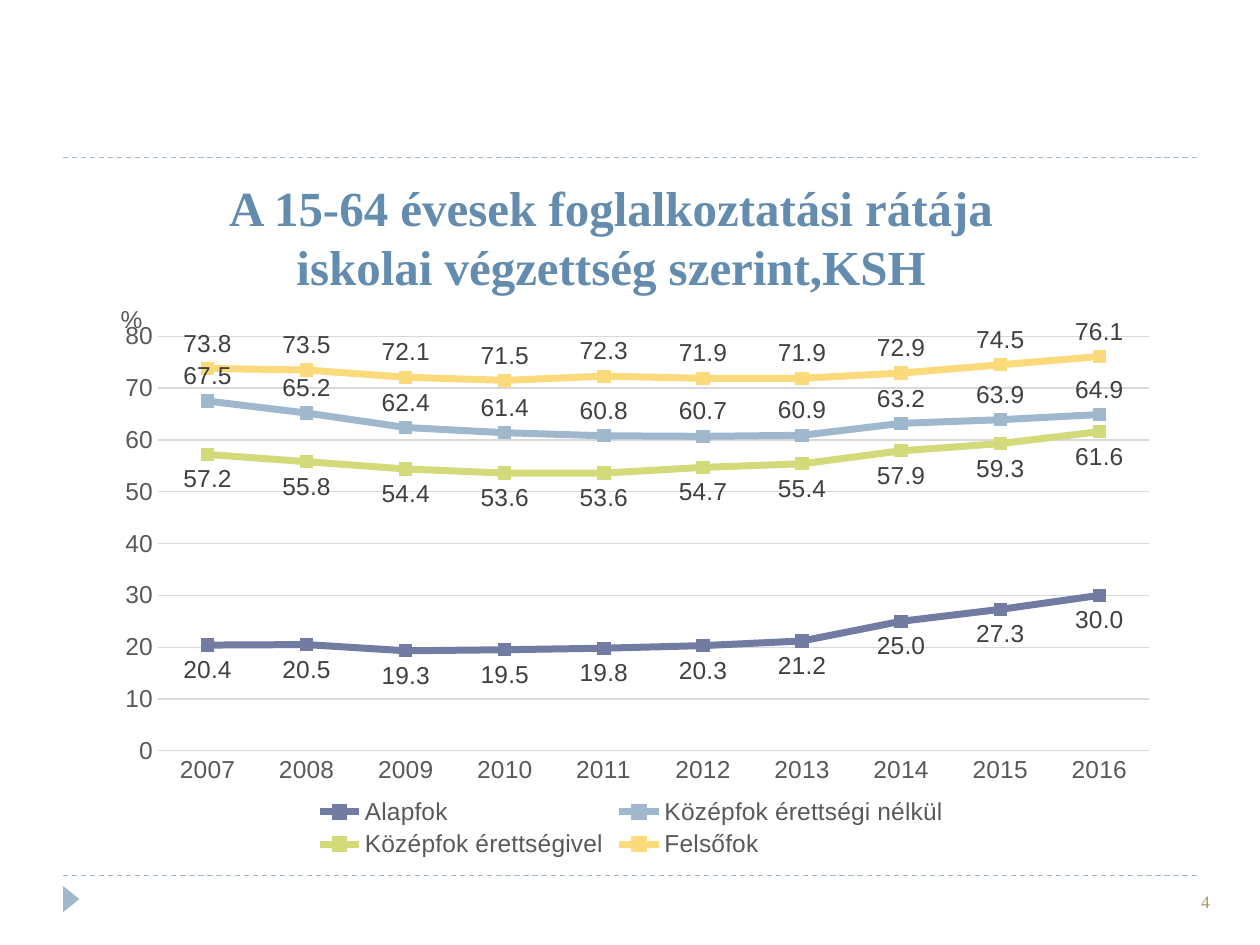
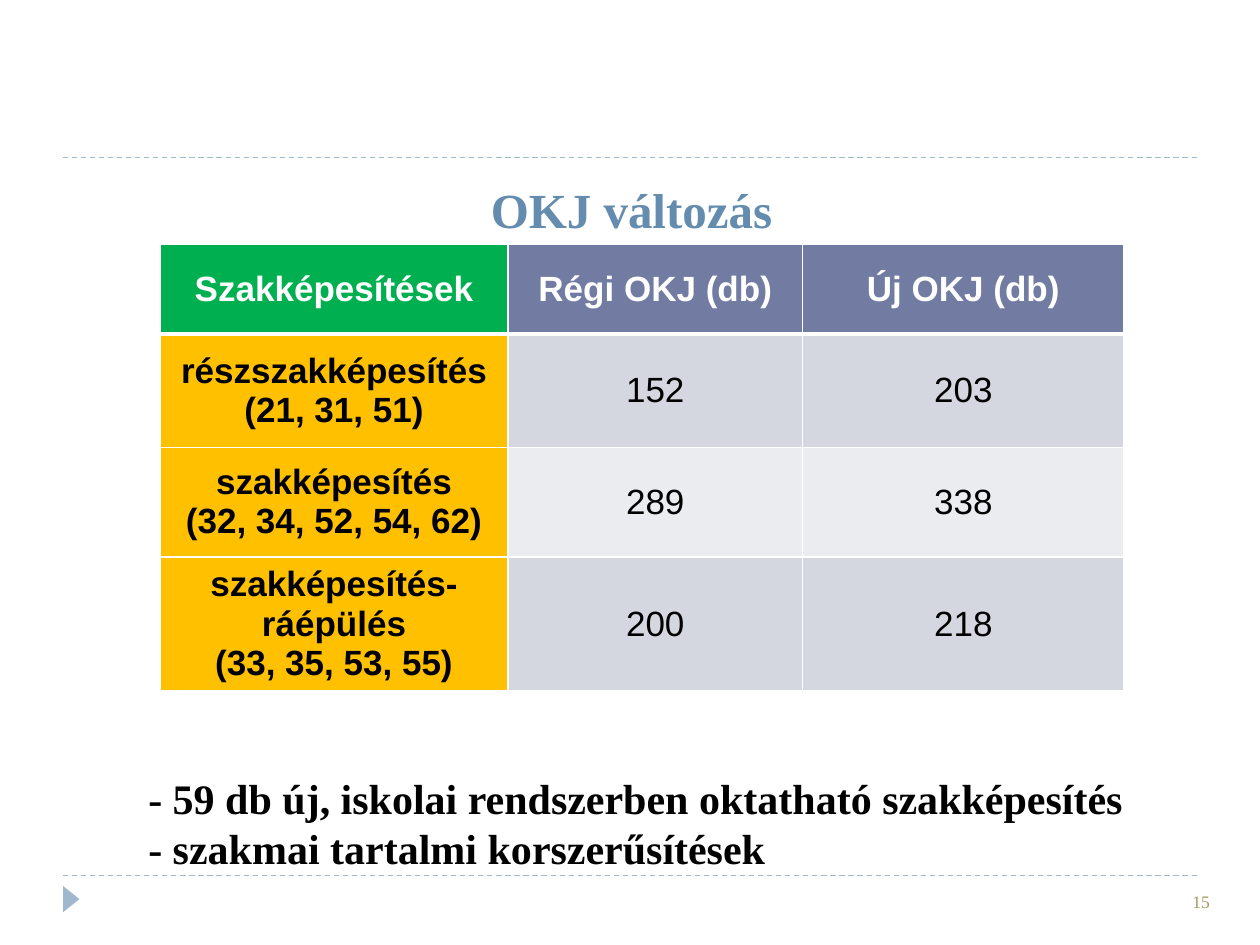
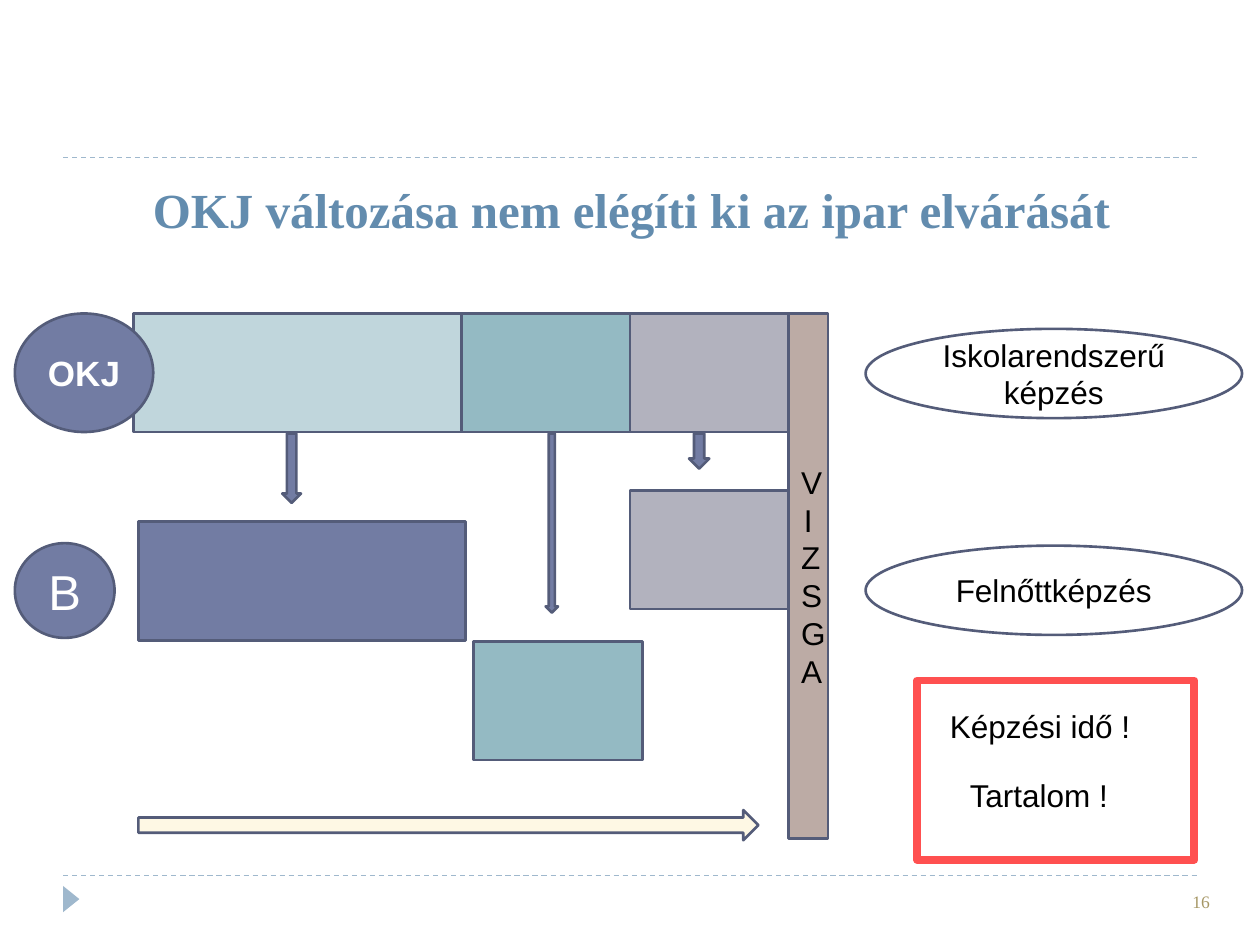
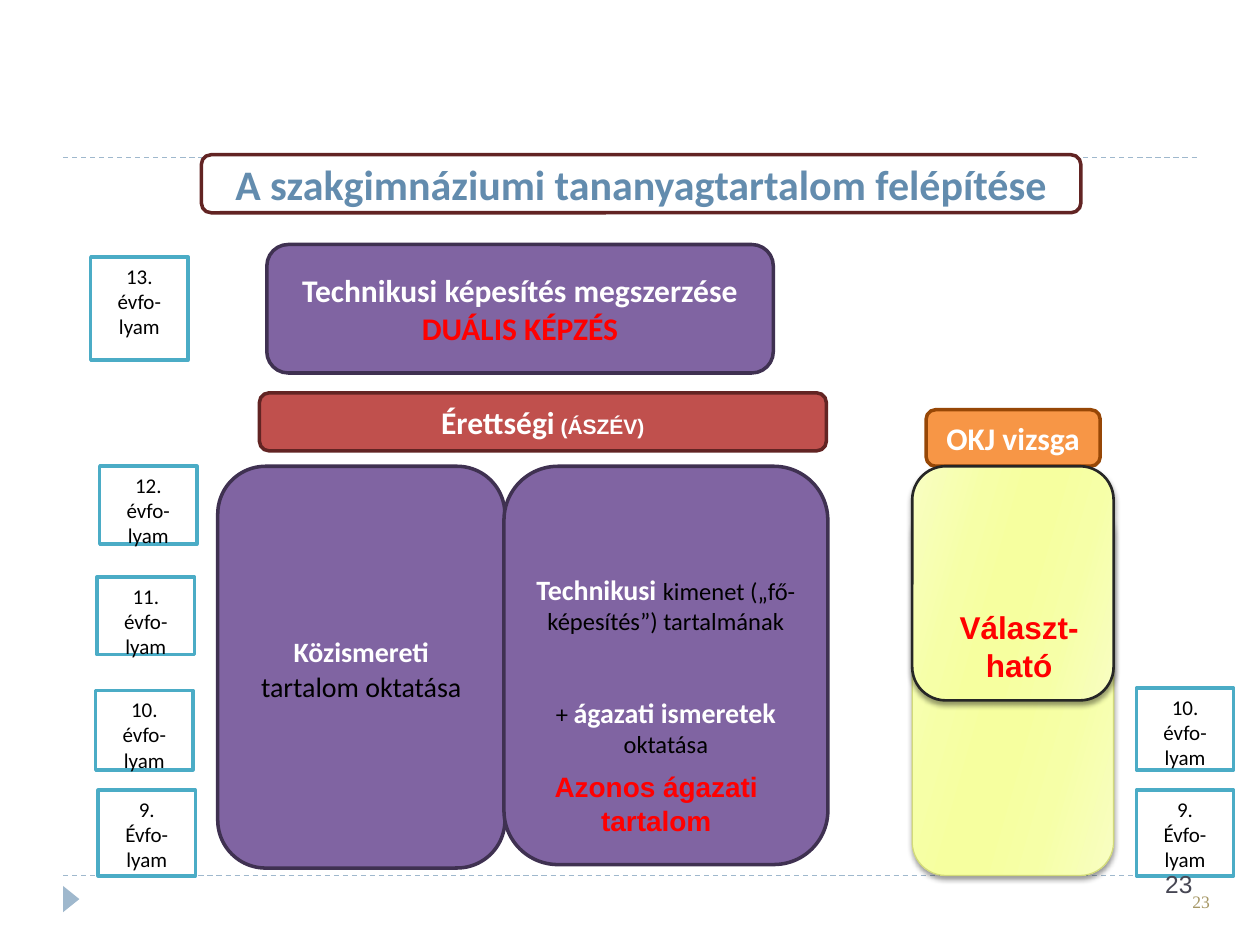
"""Build four slides on vocational training and the OKJ register."""
from collections import namedtuple

from lxml import etree
from pptx import Presentation
from pptx.chart.data import CategoryChartData
from pptx.dml.color import RGBColor
from pptx.enum.chart import (XL_CHART_TYPE, XL_LABEL_POSITION, XL_LEGEND_POSITION,
                             XL_MARKER_STYLE, XL_TICK_MARK)
from pptx.enum.dml import MSO_LINE
from pptx.enum.shapes import MSO_CONNECTOR, MSO_SHAPE
from pptx.enum.text import MSO_ANCHOR, PP_ALIGN
from pptx.oxml.ns import qn
from pptx.util import Cm, Pt

LEFT, CENTER, RIGHT = PP_ALIGN.LEFT, PP_ALIGN.CENTER, PP_ALIGN.RIGHT
TOP, MIDDLE, BOTTOM = MSO_ANCHOR.TOP, MSO_ANCHOR.MIDDLE, MSO_ANCHOR.BOTTOM
RECT, ROUND, OVAL = MSO_SHAPE.RECTANGLE, MSO_SHAPE.ROUNDED_RECTANGLE, MSO_SHAPE.OVAL
DOWN, ARROW, TRIANGLE = MSO_SHAPE.DOWN_ARROW, MSO_SHAPE.RIGHT_ARROW, MSO_SHAPE.ISOSCELES_TRIANGLE
ABOVE, BELOW = XL_LABEL_POSITION.ABOVE, XL_LABEL_POSITION.BELOW
NO_TICK = XL_TICK_MARK.NONE

COLORS = {
    "white": "FFFFFF", "black": "000000", "red": "FF0000", "title": "638CAE",
    "rule": "9FB8CD", "number": "A69765", "indigo": "727CA3", "edge": "545C79",
    "lime": "D2DA7A", "gold": "FADA7A", "axis": "595959", "label": "404040",
    "grid": "D9D9D9", "green": "00B050", "amber": "FFC000", "band": "D5D7E0",
    "pale": "EBECF0", "ice": "C0D6DC", "teal": "94BAC3", "stone": "B2B2BE",
    "clay": "BCABA5", "cream": "FEF8E4", "coral": "FF5050", "purple": "8064A2",
    "plum": "3F3151", "brick": "C0504D", "maroon": "622423", "orange": "F79646",
    "rust": "974706", "aqua": "4BACC6", "slate": "464653", "ink": "262626",
    "glow0": "F8FEC2", "glow1": "F6FFA7", "glow2": "F6FF9F",
}
SERIF, SANS, HUMAN = "Times New Roman", "Arial", "Calibri"
Style = namedtuple("Style", "font size color bold", defaults=(False,))
TITLE = Style(SERIF, 28, "title", True)
BODY = Style(SANS, 18, "black")
STRONG = Style(HUMAN, 18, "white", True)
STRONG_SMALL = Style(HUMAN, 16, "white", True)
PLAIN = Style(HUMAN, 14, "black")
GLOW = [(0, "glow0"), (30, "glow1"), (45, "glow2"), (55, "glow2"), (73, "glow1"), (100, "glow0")]


def rgb(name):
    """Return the named colour."""
    return RGBColor.from_string(COLORS[name])


def set_font(font, style):
    """Apply a style to a font."""
    font.name, font.size, font.bold = style.font, Pt(style.size), style.bold
    font.color.rgb = rgb(style.color)


def write(tf, paras, style, align=CENTER, anchor=MIDDLE, gap=0):
    """Fill a text frame; a paragraph is a string or a list of (text, style) runs."""
    tf.word_wrap = True
    tf.vertical_anchor = anchor
    for i, content in enumerate(paras):
        p = tf.paragraphs[0] if i == 0 else tf.add_paragraph()
        p.alignment = align
        if i and gap:
            p.space_before = Pt(gap)
        if isinstance(content, str):
            p.text = content
            set_font(p.font, style)
        else:
            for text, run_style in content:
                r = p.add_run()
                r.text = text
                set_font(r.font, run_style)


def add_text(s, box, paras, style, align=LEFT, anchor=TOP):
    """Add a text box."""
    write(s.shapes.add_textbox(*map(Cm, box)).text_frame, paras, style, align, anchor)


def add_block(s, kind, box, fill, line=None, width=1.5, paras=(), style=BODY, anchor=MIDDLE, gap=0):
    """Add a flat preset shape with optional text."""
    sp = s.shapes.add_shape(kind, *map(Cm, box))
    sp.shadow.inherit = False
    sp.fill.solid()
    sp.fill.fore_color.rgb = rgb(fill)
    if line:
        sp.line.color.rgb = rgb(line)
        sp.line.width = Pt(width)
    else:
        sp.line.fill.background()
    if paras:
        write(sp.text_frame, paras, style, CENTER, anchor, gap)
    return sp


def add_color(parent, name, alpha=None):
    """Append a colour element, optionally transparent."""
    clr = etree.SubElement(parent, qn("a:srgbClr"), val=COLORS[name])
    if alpha:
        etree.SubElement(clr, qn("a:alpha"), val=str(alpha * 1000))


def add_glow(s, box, line, width):
    """Add a rounded block with a yellow gradient and a soft shadow."""
    sp = add_block(s, ROUND, box, "glow1", line, width)
    sp.fill.gradient()
    sp.fill.gradient_angle = 344
    stops = sp.element.spPr.find(".//" + qn("a:gsLst"))
    for stop in list(stops):
        stops.remove(stop)
    for pos, name in GLOW:
        add_color(etree.SubElement(stops, qn("a:gs"), pos=str(pos * 1000)), name)
    shadow = etree.SubElement(sp.element.spPr.find(qn("a:effectLst")), qn("a:outerShdw"),
                              blurRad=str(Pt(3)), dist=str(Pt(2)), dir="5400000", rotWithShape="0")
    add_color(shadow, "black", 40)


def add_frame(prs, number):
    """Add a slide with its rules, corner mark and page number."""
    s = prs.slides.add_slide(prs.slide_layouts[6])
    for y in (17.65, 3.18):
        rule = s.shapes.add_connector(MSO_CONNECTOR.STRAIGHT, Cm(1.27), Cm(y), Cm(24.13), Cm(y))
        rule.line.color.rgb = rgb("rule")
        rule.line.width = Pt(0.75)
        rule.line.dash_style = MSO_LINE.DASH
        etree.SubElement(rule.element.spPr, qn("a:effectLst"))
    add_block(s, TRIANGLE, (1.17, 17.96, 0.53, 0.33), "rule").rotation = 90
    add_text(s, (18.72, 17.83, 5.92, 1.02), [str(number)], Style(SERIF, 10, "number"), RIGHT)
    return s


def add_title(s, text, box=(1.3, 3.53, 22.86, 1.4)):
    """Add the slide title."""
    add_text(s, box, [text], TITLE, CENTER, BOTTOM)


def set_layout(parent, index, **values):
    """Give a chart part a manual layout."""
    for old in parent.findall(qn("c:layout")):
        parent.remove(old)
    layout = etree.Element(qn("c:layout"))
    parent.insert(index, layout)
    manual = etree.SubElement(layout, qn("c:manualLayout"))
    for tag, value in values.items():
        etree.SubElement(manual, qn("c:" + tag), val=str(value))


def style_axes(chart):
    """Format both axes and the unit sign above the value axis."""
    style = Style(SANS, 14, "axis")
    cat, val = chart.category_axis, chart.value_axis
    for axis in (cat, val):
        axis.major_tick_mark = axis.minor_tick_mark = NO_TICK
        set_font(axis.tick_labels.font, style)
    cat.format.line.color.rgb = rgb("grid")
    cat.format.line.width = Pt(0.75)
    val.minimum_scale, val.maximum_scale, val.major_unit = 0, 80, 10
    val.tick_labels.number_format = "0"
    val.tick_labels.number_format_is_linked = False
    val.format.line.fill.background()
    val.major_gridlines.format.line.color.rgb = rgb("grid")
    val.major_gridlines.format.line.width = Pt(0.75)
    tf = val.axis_title.text_frame
    tf.text = "%"
    set_font(tf.paragraphs[0].font, style)
    tf._txBody.bodyPr.set("rot", "0")
    set_layout(val.axis_title._element, 1, xMode="edge", yMode="edge", x=0.02, y=0.01)


def style_series(series, color, position):
    """Format one line with its markers and labels."""
    series.smooth = False
    series.format.line.color.rgb = rgb(color)
    series.format.line.width = Pt(4)
    series.marker.style = XL_MARKER_STYLE.SQUARE
    series.marker.size = 7
    series.marker.format.fill.solid()
    series.marker.format.fill.fore_color.rgb = rgb(color)
    series.marker.format.line.color.rgb = rgb(color)
    labels = series.data_labels
    labels.show_value = True
    labels.position = position
    labels.number_format = "0.0"
    labels.number_format_is_linked = False
    set_font(labels.font, Style(SANS, 14, "label"))


def add_rate_chart(s, box):
    """Add the line chart of employment rates."""
    rates = [
        ("Alapfok", "indigo", BELOW,
         (20.4, 20.5, 19.3, 19.5, 19.8, 20.3, 21.2, 25.0, 27.3, 30.0)),
        ("Középfok érettségi nélkül", "rule", ABOVE,
         (67.5, 65.2, 62.4, 61.4, 60.8, 60.7, 60.9, 63.2, 63.9, 64.9)),
        ("Középfok érettségivel", "lime", BELOW,
         (57.2, 55.8, 54.4, 53.6, 53.6, 54.7, 55.4, 57.9, 59.3, 61.6)),
        ("Felsőfok", "gold", ABOVE,
         (73.8, 73.5, 72.1, 71.5, 72.3, 71.9, 71.9, 72.9, 74.5, 76.1)),
    ]
    data = CategoryChartData(number_format="0.0")
    data.categories = [str(year) for year in range(2007, 2017)]
    for name, _, _, values in rates:
        data.add_series(name, values)
    chart = s.shapes.add_chart(XL_CHART_TYPE.LINE_MARKERS, *map(Cm, box), data).chart
    chart.has_title = False
    set_font(chart.font, Style(SANS, 14, "black"))
    chart.has_legend = True
    chart.legend.position = XL_LEGEND_POSITION.BOTTOM
    chart.legend.include_in_layout = False
    set_font(chart.legend.font, Style(SANS, 14, "axis"))
    style_axes(chart)
    chart.plots[0].vary_by_categories = False
    for series, (_, color, position, _) in zip(chart.plots[0].series, rates):
        style_series(series, color, position)
    set_layout(chart._chartSpace.chart.plotArea, 0, layoutTarget="inner", xMode="edge",
               yMode="edge", x=0.059, y=0.075, w=0.923, h=0.728)


def style_cell(cell, paras, fill, style, header):
    """Fill one table cell and draw its white borders."""
    cell.margin_left = cell.margin_right = Cm(0.18)
    cell.margin_top = cell.margin_bottom = 0
    write(cell.text_frame, paras, style)
    cell.vertical_anchor = MIDDLE
    if header:
        cell.text_frame.paragraphs[0].space_after = Pt(6)
    tcPr = cell._tc.get_or_add_tcPr()
    for side in "LRTB":
        width = 3 if header and side == "B" else 1
        ln = etree.SubElement(tcPr, qn("a:ln" + side), w=str(Pt(width)))
        add_color(etree.SubElement(ln, qn("a:solidFill")), "white")
    cell.fill.solid()
    cell.fill.fore_color.rgb = rgb(fill)


def add_count_table(s, x, y):
    """Add the table of qualification counts."""
    widths, heights = (7.01, 5.94, 6.48), (1.8, 2.29, 2.21, 2.69)
    rows = [
        (["Szakképesítések"], ["Régi OKJ (db)"], ["Új OKJ (db)"]),
        (["részszakképesítés", "(21, 31, 51)"], ["152"], ["203"]),
        (["szakképesítés", "(32, 34, 52, 54, 62)"], ["289"], ["338"]),
        (["szakképesítés-ráépülés", "(33, 35, 53, 55)"], ["200"], ["218"]),
    ]
    table = s.shapes.add_table(len(rows), len(widths), Cm(x), Cm(y),
                               Cm(sum(widths)), Cm(sum(heights))).table
    for column, width in zip(table.columns, widths):
        column.width = Cm(width)
    for i, (row, height) in enumerate(zip(rows, heights)):
        table.rows[i].height = Cm(height)
        for j, paras in enumerate(row):
            if i == 0:
                fill = "indigo" if j else "green"
            else:
                fill = ("band" if i % 2 else "pale") if j else "amber"
            style = Style(SANS, 20, "black" if i else "white", i == 0 or j == 0)
            style_cell(table.cell(i, j), paras, fill, style, i == 0)


def add_schedule(s, x, y):
    """Draw the training blocks, the arrows between them and the exam bar."""
    high = 2.39
    parts = [
        (RECT, 2.39, 0, 13.21, high, "ice"),
        (RECT, 2.49, 4.2, 6.6, high, "indigo"),
        (RECT, 9, 0, 3.4, high, "teal"),
        (DOWN, 5.39, 2.42, 0.38, 1.4, "indigo"),
        (RECT, 9.25, 6.61, 3.4, high, "teal"),
        (DOWN, 10.7, 2.42, 0.25, 3.61, "indigo"),
        (RECT, 12.4, 0, 3.2, high, "stone"),
        (RECT, 12.4, 3.57, 3.2, high, "stone"),
        (DOWN, 13.59, 2.42, 0.41, 0.71, "indigo"),
        (ARROW, 2.49, 10.01, 12.5, 0.61, "cream"),
    ]
    for kind, dx, dy, w, h, fill in parts:
        add_block(s, kind, (x + dx, y + dy, w, h), fill, "edge")
    exam = add_block(s, RECT, (x + 15.6, y, 0.79, 10.59), "clay", "edge", paras=["VIZSGA"])
    exam.text_frame._txBody.bodyPr.set("vert", "wordArtVert")
    add_block(s, OVAL, (x, y + 4.63, 2.01, 1.91), "indigo", "edge", paras=["B"],
              style=Style(SANS, 28, "white"))
    add_block(s, OVAL, (x, y, 2.79, high), "indigo", "edge", paras=["OKJ"],
              style=Style(SANS, 20, "white", True))


def add_remarks(s, x, y):
    """Draw the two training forms and the framed warning."""
    for dy, text in ((0, "Iskolarendszerű képzés"), (4.37, "Felnőttképzés")):
        add_block(s, OVAL, (x, y + dy, 7.59, 1.8), "white", "edge", paras=[text])
    add_block(s, RECT, (x + 1.04, y + 7.09, 5.59, 3.61), "white", "coral", 4.5)
    add_text(s, (x + 1.45, y + 7.49, 4.8, 1.02), ["Képzési idő !"], BODY)
    add_text(s, (x + 1.85, y + 8.89, 3.61, 1.02), ["Tartalom !"], BODY)


def add_grades(s, x, y, grades):
    """Draw a column of grade labels from (dx, dy, height, paragraphs)."""
    for dx, dy, h, paras in grades:
        add_block(s, RECT, (x + dx, y + dy, 1.96, h), "white", "aqua", 2, paras,
                  Style(HUMAN, 12, "black"), TOP)


def add_curriculum(s, x, y):
    """Draw the main curriculum blocks up to the technician level."""
    general = [("Közismereti", STRONG_SMALL), (" ", Style(HUMAN, 18, "black")),
               ("tartalom oktatása", Style(HUMAN, 16, "black"))]
    technical = [("Technikusi ", STRONG_SMALL), ("kimenet („fő-képesítés”) tartalmának", PLAIN)]
    sector = [("+ ", PLAIN), ("ágazati ismeretek ", STRONG_SMALL), ("oktatása", PLAIN)]
    final = [("Érettségi", STRONG), (" (ÁSZÉV)", Style(SANS, 12, "white", True))]
    dual = [("DUÁLIS KÉPZÉS", STRONG._replace(color="red"))]
    add_block(s, ROUND, (x, y + 4.47, 5.79, 8.1), "purple", "plum", 2, [general])
    add_block(s, ROUND, (x + 5.77, y + 4.47, 6.53, 8.03), "purple", "plum", 2,
              [technical, sector], gap=34)
    add_block(s, ROUND, (x + 0.99, y, 10.21, 2.59), "purple", "plum", 2,
              ["Technikusi képesítés megszerzése", dual], STRONG)
    add_block(s, ROUND, (x + 0.84, y + 2.99, 11.43, 1.17), "brick", "maroon", 2, [final])
    add_text(s, (x + 6.48, y + 10.46, 4.72, 1.63), ["Azonos ágazati tartalom"],
             Style(SANS, 16, "red", True), CENTER)


def add_optional_path(s, x, y):
    """Draw the optional path that ends with the OKJ exam."""
    add_glow(s, (x, y + 1.82, 4.06, 7.57), "lime", 0.75)
    add_block(s, ROUND, (x + 0.28, y, 3.51, 1.14), "orange", "rust", 2, ["OKJ vizsga"], STRONG)
    add_glow(s, (x, y + 1.14, 4.06, 4.72), "ink", 1.5)
    add_text(s, (x + 0.53, y + 3.88, 3.25, 1.8), ["Választ-ható"],
             Style(SANS, 18, "red", True), CENTER)


def build_rates(prs):
    """Slide with employment rates by schooling."""
    s = add_frame(prs, 4)
    add_title(s, "A 15-64 évesek foglalkoztatási rátája\viskolai végzettség szerint,KSH",
              (0.89, 3.33, 22.86, 2.74))
    add_rate_chart(s, (1.91, 5.92, 21.64, 11.48))


def build_counts(prs):
    """Slide with old and new qualification counts."""
    s = add_frame(prs, 15)
    add_title(s, "OKJ változás")
    add_count_table(s, 3.23, 4.93)
    add_text(s, (2.74, 15.44, 20.65, 2.31),
             ["- 59 db új, iskolai rendszerben oktatható szakképesítés",
              "- szakmai tartalmi korszerűsítések"], Style(SERIF, 24, "black", True))


def build_schedule(prs):
    """Slide comparing school and adult training."""
    s = add_frame(prs, 16)
    add_title(s, "OKJ változása nem elégíti ki az ipar elvárását")
    add_schedule(s, 0.3, 6.32)
    add_remarks(s, 17.45, 6.63)


def build_curriculum(prs):
    """Slide with the structure of the curriculum."""
    s = add_frame(prs, 23)
    ninth = ["9.", "Évfo-lyam"]
    add_curriculum(s, 4.39, 4.93)
    add_optional_path(s, 18.39, 8.26)
    add_grades(s, 1.83, 5.18, [
        (0, 0, 2.08, ["13. évfo-lyam"]), (0.18, 4.22, 1.57, ["12. évfo-lyam"]),
        (0.13, 6.45, 1.57, ["11. évfo-lyam"]), (0.1, 8.74, 1.6, ["10. évfo-lyam"]),
        (0.15, 10.75, 1.73, ninth)])
    add_grades(s, 22.91, 13.87, [(0, 0, 1.65, ["10. évfo-lyam"]), (0, 2.06, 1.73, ninth)])
    add_text(s, (23.24, 17.4, 1.42, 1.02), ["23"], Style(SANS, 14, "slate"))
    add_block(s, ROUND, (4.06, 3.12, 17.73, 1.17), "white", "maroon", 2,
              ["A szakgimnáziumi tananyagtartalom felépítése"], Style(HUMAN, 24, "title", True))


def main():
    """Build and save the presentation."""
    prs = Presentation()
    prs.slide_width, prs.slide_height = Cm(25.4), Cm(19.05)
    for build in (build_rates, build_counts, build_schedule, build_curriculum):
        build(prs)
    prs.save("out.pptx")


if __name__ == "__main__":
    main()
